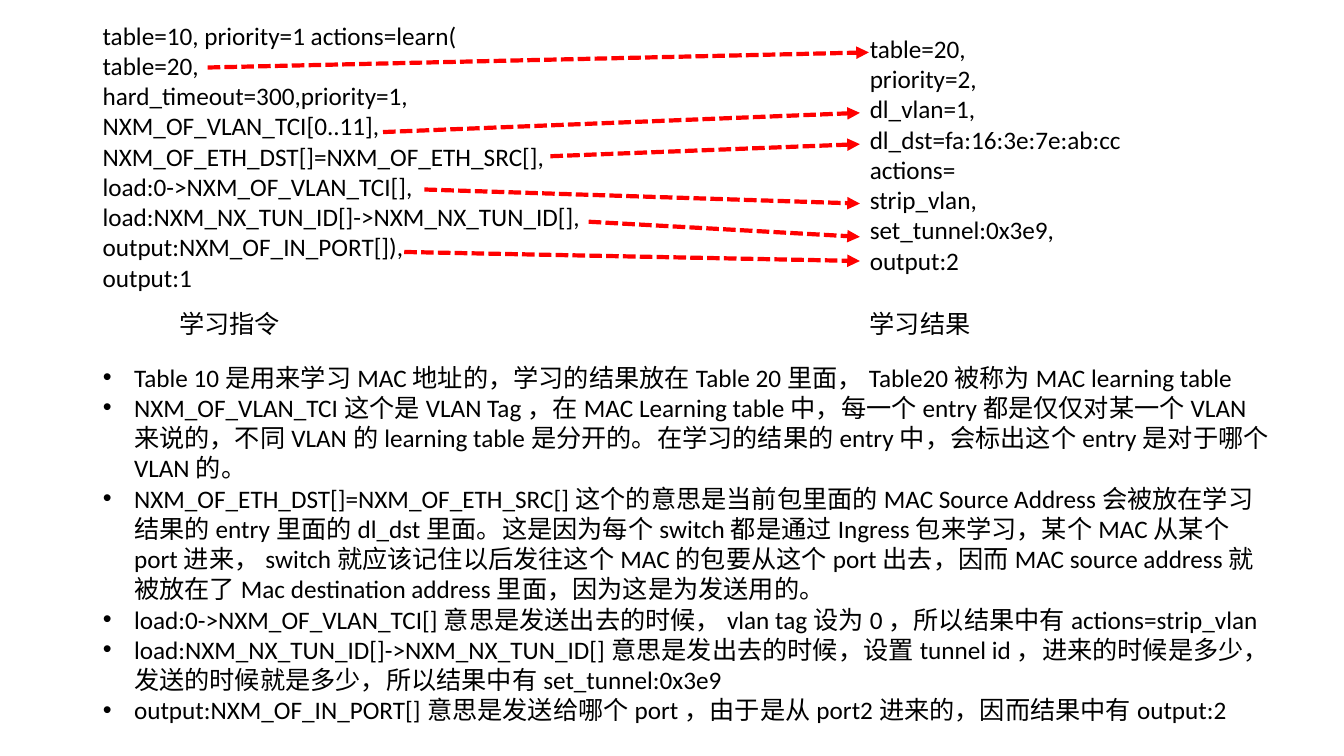
import dataclasses

import lxml.etree
import pptx
import pptx.dml.color
import pptx.enum.dml
import pptx.enum.shapes
import pptx.enum.text
import pptx.oxml.ns
import pptx.presentation
import pptx.shapes.autoshape
import pptx.slide
import pptx.util

BLACK = pptx.dml.color.RGBColor(0x00, 0x00, 0x00)
RED = pptx.dml.color.RGBColor(0xFF, 0x00, 0x00)
SLIDE_WIDTH = pptx.util.Inches(13.333)
SLIDE_HEIGHT = pptx.util.Inches(7.5)
BULLET_INDENT = pptx.util.Inches(0.31)

# Horizontal and vertical places are percentages of the slide's width and height.
LEFT_COLUMN = 6.9
RIGHT_COLUMN = 63.98
CAPTION_ROW = 40.13

FONT_FORMAT = {"name": "Calibri", "size": pptx.util.Pt(18)}
PARAGRAPH_FORMAT = {
    "alignment": pptx.enum.text.PP_ALIGN.LEFT,
    "space_before": pptx.util.Pt(0),
    "space_after": pptx.util.Pt(0),
    "line_spacing": 1.0,
}
FRAME_FORMAT = {
    "auto_size": pptx.enum.text.MSO_AUTO_SIZE.SHAPE_TO_FIT_TEXT,
    "vertical_anchor": pptx.enum.text.MSO_ANCHOR.TOP,
}


@dataclasses.dataclass(frozen=True)
class TextBlock:
    left: float
    top: float
    width: float
    height: float
    lines: tuple[str, ...]
    wraps: bool = True


@dataclasses.dataclass(frozen=True)
class Arrow:
    start_x: float
    start_y: float
    end_y: float
    end_x: float = RIGHT_COLUMN


TEXT_BLOCKS = (
    TextBlock(LEFT_COLUMN, 2, 89.85, 37.73, (
        "table=10, priority=1 actions=learn(",
        "table=20,",
        "hard_timeout=300,priority=1,",
        "NXM_OF_VLAN_TCI[0..11],",
        "NXM_OF_ETH_DST[]=NXM_OF_ETH_SRC[],",
        "load:0->NXM_OF_VLAN_TCI[],",
        "load:NXM_NX_TUN_ID[]->NXM_NX_TUN_ID[],",
        "output:NXM_OF_IN_PORT[]),",
        "output:1",
    )),
    TextBlock(RIGHT_COLUMN, 3.73, 23.48, 33.6, (
        "table=20,",
        "priority=2,",
        "dl_vlan=1,",
        "dl_dst=fa:16:3e:7e:ab:cc",
        "actions=",
        "strip_vlan,",
        "set_tunnel:0x3e9,",
        "output:2",
    )),
    TextBlock(12.6, CAPTION_ROW, 9.08, 5.33, ("学习指令",), wraps=False),
    TextBlock(RIGHT_COLUMN, CAPTION_ROW, 9.08, 5.33, ("学习结果",), wraps=False),
)

EXPLANATION = TextBlock(LEFT_COLUMN, 47.2, 88.8, 45.73, (
    "Table 10是用来学习MAC地址的，学习的结果放在Table 20里面，Table20被称为MAC learning table",
    "NXM_OF_VLAN_TCI这个是VLAN Tag，在MAC Learning table中，每一个entry都是仅仅对某一个VLAN来说的，"
    "不同VLAN的learning table是分开的。在学习的结果的entry中，会标出这个entry是对于哪个VLAN的。",
    "NXM_OF_ETH_DST[]=NXM_OF_ETH_SRC[]这个的意思是当前包里面的MAC Source Address会被放在学习结果的entry里面的"
    "dl_dst里面。这是因为每个switch都是通过Ingress包来学习，某个MAC从某个port进来，"
    "switch就应该记住以后发往这个MAC的包要从这个port出去，"
    "因而MAC source address就被放在了Mac destination address里面，因为这是为发送用的。",
    "load:0->NXM_OF_VLAN_TCI[]意思是发送出去的时候，vlan tag设为0，所以结果中有actions=strip_vlan",
    "load:NXM_NX_TUN_ID[]->NXM_NX_TUN_ID[]意思是发出去的时候，设置tunnel id，进来的时候是多少，"
    "发送的时候就是多少，所以结果中有set_tunnel:0x3e9",
    "output:NXM_OF_IN_PORT[]意思是发送给哪个port，由于是从port2进来的，因而结果中有output:2",
))

ARROWS = (
    Arrow(15.45, 8.93, 6.93, end_x=64.65),
    Arrow(28.5, 17.47, 14.93),
    Arrow(40.95, 20.67, 19.07),
    Arrow(31.58, 25.07, 26.93),
    Arrow(43.8, 29.33, 31.33),
    Arrow(30.08, 33.33, 34.53),
)


def across(percent: float) -> pptx.util.Length:
    return pptx.util.Emu(round(SLIDE_WIDTH * percent / 100))


def down(percent: float) -> pptx.util.Length:
    return pptx.util.Emu(round(SLIDE_HEIGHT * percent / 100))


def apply_format(target: object, values: dict[str, object]) -> None:
    for name, value in values.items():
        setattr(target, name, value)


def fill_text(shape: pptx.shapes.autoshape.Shape, block: TextBlock) -> None:
    frame = shape.text_frame
    frame.text = "\n".join(block.lines)
    apply_format(frame, FRAME_FORMAT | {"word_wrap": block.wraps})
    for paragraph in frame.paragraphs:
        apply_format(paragraph, PARAGRAPH_FORMAT)
        for run in paragraph.runs:
            apply_format(run.font, FONT_FORMAT)
            run.font.color.rgb = BLACK


def add_text_block(slide: pptx.slide.Slide, block: TextBlock) -> None:
    shape = slide.shapes.add_textbox(
        across(block.left), down(block.top), across(block.width), down(block.height))
    fill_text(shape, block)


def fill_bullet_list(shape: pptx.shapes.autoshape.Shape, block: TextBlock) -> None:
    apply_format(shape, {
        "left": across(block.left),
        "top": down(block.top),
        "width": across(block.width),
        "height": down(block.height),
    })
    fill_text(shape, block)
    for paragraph in shape.text_frame.paragraphs:
        properties = paragraph._p.get_or_add_pPr()
        properties.set("marL", str(BULLET_INDENT))
        properties.set("indent", str(-BULLET_INDENT))
        font = lxml.etree.SubElement(properties, pptx.oxml.ns.qn("a:buFont"))
        font.set("typeface", "Arial")
        bullet = lxml.etree.SubElement(properties, pptx.oxml.ns.qn("a:buChar"))
        bullet.set("char", "•")


def add_arrow(slide: pptx.slide.Slide, arrow: Arrow) -> None:
    connector = slide.shapes.add_connector(
        pptx.enum.shapes.MSO_CONNECTOR.STRAIGHT,
        across(arrow.start_x), down(arrow.start_y), across(arrow.end_x), down(arrow.end_y))
    line = connector.line
    line.color.rgb = RED
    apply_format(line, {
        "width": pptx.util.Pt(3),
        "dash_style": pptx.enum.dml.MSO_LINE.SQUARE_DOT,
    })
    properties = connector.element.spPr
    head = lxml.etree.SubElement(
        properties.find(pptx.oxml.ns.qn("a:ln")), pptx.oxml.ns.qn("a:tailEnd"))
    head.set("type", "triangle")
    lxml.etree.SubElement(properties, pptx.oxml.ns.qn("a:effectLst"))


def main() -> None:
    presentation = pptx.Presentation()
    apply_format(presentation, {"slide_width": SLIDE_WIDTH, "slide_height": SLIDE_HEIGHT})
    slide = presentation.slides.add_slide(presentation.slide_layouts.get_by_name("Title and Content"))
    title = slide.shapes.title.element
    title.getparent().remove(title)
    fill_bullet_list(slide.placeholders[1], EXPLANATION)
    for block in TEXT_BLOCKS:
        add_text_block(slide, block)
    for arrow in ARROWS:
        add_arrow(slide, arrow)
    presentation.save("out.pptx")


if __name__ == "__main__":
    main()
